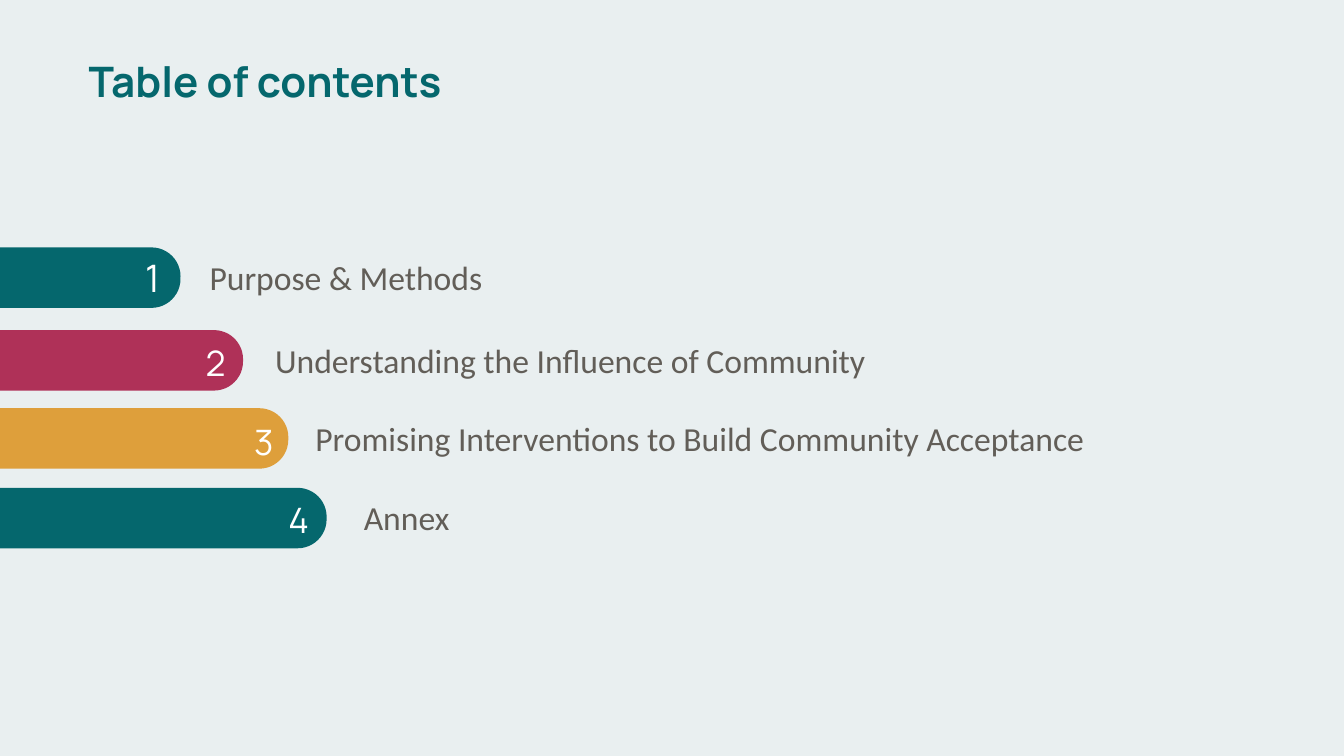
import collections
import pptx
import pptx.dml.color
import pptx.enum.shapes
import pptx.enum.text
import pptx.util

COLORS = {
    "background": "E9EFF0",
    "teal": "05676D",
    "berry": "AF3158",
    "amber": "DE9F3B",
    "label": "625E58",
    "number": "FFFFFF",
}
SLIDE_WIDTH = pptx.util.Inches(13.33)
SLIDE_HEIGHT = pptx.util.Inches(7.5)
BAR_ROWS = 8
LABEL_DROP = 0.6
LABEL_ROWS = 6.67
NUMBER_COLUMNS = 1.65

# Horizontal lengths are in columns and vertical ones in rows, 100 to the slide.
Entry = collections.namedtuple(
    "Entry",
    "text color bar_top bar_end label_left label_width "
    "number_left number_top number_rows number_size number_spacing",
)
ENTRIES = [
    Entry("Purpose & Methods", "teal", 32.73, 13.43, 14.85, 50,
          10.8, 33.73, 6.67, 27, 0.9),
    Entry("Understanding the Influence of Community", "berry", 43.67, 18.08, 19.73, 50,
          15.3, 46, 5, 25, 0.8),
    Entry("Promising Interventions to Build Community Acceptance", "amber", 54, 21.45,
          22.73, 62.33, 18.9, 56.4, 5, 25, 0.8),
    Entry("Annex", "teal", 64.53, 24.3, 26.33, 59.93,
          21.45, 66.67, 5, 25, 0.8),
]


def columns(count):
    return round(SLIDE_WIDTH * count / 100)


def rows(count):
    return round(SLIDE_HEIGHT * count / 100)


def rgb(name):
    return pptx.dml.color.RGBColor.from_string(COLORS[name])


def write_line(frame, text, font, size, color, spacing=None, bold=False):
    frame.word_wrap = True
    para = frame.paragraphs[0]
    para.text = text
    para.alignment = pptx.enum.text.PP_ALIGN.LEFT
    para.line_spacing = spacing
    para.font.name = font
    para.font.size = pptx.util.Pt(size)
    para.font.bold = bold
    para.font.color.rgb = rgb(color)


def set_title(slide, text):
    title = slide.shapes.title
    title.left, title.top = 0, rows(2.8)
    title.width, title.height = columns(86.25), rows(16.67)
    frame = title.text_frame
    frame.auto_size = pptx.enum.text.MSO_AUTO_SIZE.NONE
    frame.vertical_anchor = pptx.enum.text.MSO_ANCHOR.MIDDLE
    frame.margin_left = columns(6.6)
    write_line(frame, text, "Manrope", 30, "teal", 0.9, bold=True)


def add_bar(slide, entry):
    """Turn a round-topped rectangle so that it grows from the left edge."""
    length, breadth = columns(entry.bar_end), rows(BAR_ROWS)
    shift = (length - breadth) // 2
    bar = slide.shapes.add_shape(
        pptx.enum.shapes.MSO_SHAPE.ROUND_2_SAME_RECTANGLE,
        shift, rows(entry.bar_top) - shift, breadth, length)
    bar.rotation = 90
    bar.adjustments[0] = 0.48
    bar.adjustments[1] = 0
    bar.shadow.inherit = False
    bar.fill.solid()
    bar.fill.fore_color.rgb = rgb(entry.color)
    bar.line.fill.background()


def add_label(slide, entry):
    box = slide.shapes.add_textbox(
        columns(entry.label_left), rows(entry.bar_top + LABEL_DROP),
        columns(entry.label_width), rows(LABEL_ROWS))
    box.text_frame.auto_size = pptx.enum.text.MSO_AUTO_SIZE.SHAPE_TO_FIT_TEXT
    write_line(box.text_frame, entry.text, "Calibri", 24, "label")


def add_number(slide, entry, number):
    box = slide.shapes.add_textbox(
        columns(entry.number_left), rows(entry.number_top),
        columns(NUMBER_COLUMNS), rows(entry.number_rows))
    frame = box.text_frame
    frame.margin_left = frame.margin_right = 0
    frame.margin_top = frame.margin_bottom = 0
    frame.vertical_anchor = pptx.enum.text.MSO_ANCHOR.MIDDLE
    write_line(frame, str(number), "Manrope", entry.number_size, "number",
               entry.number_spacing)


def main():
    deck = pptx.Presentation()
    deck.slide_width, deck.slide_height = SLIDE_WIDTH, SLIDE_HEIGHT
    slide = deck.slides.add_slide(deck.slide_layouts.get_by_name("Title Only"))
    slide.background.fill.solid()
    slide.background.fill.fore_color.rgb = rgb("background")
    set_title(slide, "Table of contents")
    for number, entry in enumerate(ENTRIES, start=1):
        add_bar(slide, entry)
        add_label(slide, entry)
        add_number(slide, entry, number)
    deck.save("out.pptx")


if __name__ == "__main__":
    main()
